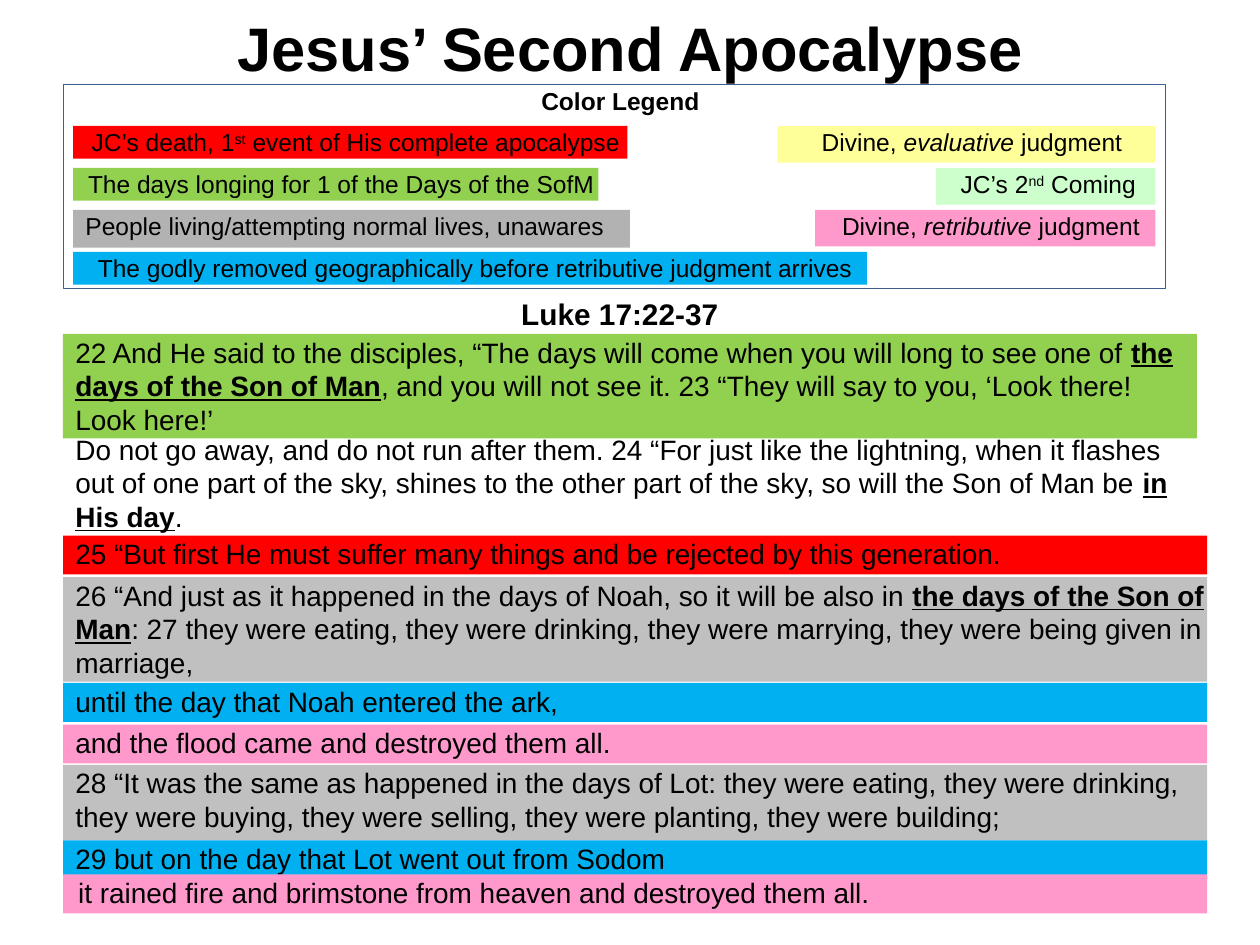
from dataclasses import dataclass

from pptx import Presentation
from pptx.dml.color import RGBColor
from pptx.enum.shapes import MSO_SHAPE
from pptx.enum.text import MSO_ANCHOR, PP_ALIGN
from pptx.shapes.shapetree import GroupShapes
from pptx.util import Inches, Pt

RECTANGLE = MSO_SHAPE.RECTANGLE
LEFT, CENTER = PP_ALIGN.LEFT, PP_ALIGN.CENTER
TOP, MIDDLE = MSO_ANCHOR.TOP, MSO_ANCHOR.MIDDLE

COLORS = {
    "text": "000000",
    "frame": "3A5F8C",
    "longing": "92D050",
    "death": "FF0000",
    "normal life": "C0C0C0",
    "normal life key": "B2B2B2",
    "removal": "00B0F0",
    "retribution": "FF99CC",
    "evaluation": "FFFF99",
    "coming": "CCFFCC",
}
FONT = "Arial"
KEY_PHRASE = {"bold": True, "underline": True}
BOLD = {"bold": True}
ITALIC = {"italic": True}
SUPERSCRIPT = "30000"


@dataclass
class Run:
    text: str
    font: dict | None = None
    raised: bool = False


@dataclass
class Band:
    runs: list[Run]
    left: float
    top: float
    width: float
    height: float
    size: float
    color: str | None = None
    align: PP_ALIGN = LEFT
    inset: float = 0.1
    wrap: bool = True
    anchor: MSO_ANCHOR = TOP


def rgb(name: str) -> RGBColor:
    return RGBColor.from_string(COLORS[name])


def draw_band(shapes: GroupShapes, band: Band) -> None:
    """Draw a text block, on a coloured bar if it has a color."""
    box = [Inches(v) for v in (band.left, band.top, band.width, band.height)]
    if band.color:
        block = shapes.add_shape(RECTANGLE, *box)
        block.shadow.inherit = False
        block.fill.solid()
        block.fill.fore_color.rgb = rgb(band.color)
        block.line.fill.background()
    else:
        block = shapes.add_textbox(*box)

    frame = block.text_frame
    edge = Inches(0.01)
    layout = {
        "margin_left": Inches(band.inset),
        "margin_top": edge,
        "margin_right": edge,
        "margin_bottom": edge,
        "word_wrap": band.wrap,
        "vertical_anchor": band.anchor,
    }
    for attribute, value in layout.items():
        setattr(frame, attribute, value)

    paragraph = frame.paragraphs[0]
    paragraph.alignment = band.align
    for part in band.runs:
        run = paragraph.add_run()
        run.text = part.text
        run.font.color.rgb = rgb("text")
        font = {"name": FONT, "size": Pt(band.size), **(part.font or {})}
        for attribute, value in font.items():
            setattr(run.font, attribute, value)
        if part.raised:
            run._r.get_or_add_rPr().set("baseline", SUPERSCRIPT)


def draw_passage(shapes: GroupShapes) -> None:
    left, size, width = 0.5, 16, 9.08
    verses = [
        ("longing", 2.65, 0.83, [
            Run("22 And He said to the disciples, “The days will come when you will long to see one of "),
            Run("the days of the Son of Man", KEY_PHRASE),
            Run(", and you will not see it. 23 “They will say to you, ‘Look there! Look here!’")]),
        (None, 3.42, 0.8, [
            Run("Do not go away, and do not run after them. 24 “For just like the lightning, when it "
                "flashes out of one part of the sky, shines to the other part of the sky, so will "
                "the Son of Man be "),
            Run("in His day", KEY_PHRASE),
            Run(".")]),
        ("death", 4.25, 0.31, [
            Run("25 “But first He must suffer many things and be rejected by this generation.")]),
        ("normal life", 4.58, 0.83, [
            Run("26 “And just as it happened in the days of Noah, so it will be also in "),
            Run("the days of the Son of Man", KEY_PHRASE),
            Run(": 27 they were eating, they were drinking, they were marrying, they were being "
                "given in marriage,")]),
        ("removal", 5.42, 0.31, [Run("until the day that Noah entered the ark,")]),
        ("retribution", 5.75, 0.31, [Run("and the flood came and destroyed them all.")]),
        ("normal life", 6.07, 0.6, [
            Run("28 “It was the same as happened in the days of Lot: they were eating, they were "
                "drinking, they were buying, they were selling, they were planting, they were "
                "building;")]),
        ("removal", 6.67, 0.31, [Run("29 but on the day that Lot went out from Sodom")]),
    ]
    for color, top, height, runs in verses:
        verse_width = 9 if color == "longing" else width
        draw_band(shapes, Band(runs, left, top, verse_width, height, size, color))
    draw_band(shapes, Band(
        [Run("it rained fire and brimstone from heaven and destroyed them all.")],
        left, 6.94, width, 0.31, size, "retribution", inset=0.12))
    draw_band(shapes, Band([Run("Luke 17:22-37", BOLD)], 4.03, 2.34, 1.69, 0.33, 17,
                           align=CENTER, wrap=False))


def draw_legend(shapes: GroupShapes) -> None:
    left, right, first_top, pitch, size = 0.58, 9.17, 1, 1 / 3, 14
    left_keys = [
        ("death", 4.4, 0.26, CENTER, [
            Run("JC’s death, 1"), Run("st", raised=True),
            Run(" event of His complete apocalypse")]),
        ("longing", 4.17, 0.26, CENTER, [Run("The days longing for 1 of the Days of the SofM")]),
        ("normal life key", 4.42, 0.3, LEFT, [
            Run("People living/attempting normal lives, unawares")]),
        ("removal", 6.3, 0.26, CENTER, [
            Run("The godly removed geographically before retributive judgment arrives")]),
    ]
    right_keys = [
        ("evaluation", 3, 0.1, [
            Run("Divine, "), Run("evaluative", ITALIC), Run(" judgment")]),
        ("coming", 1.74, 0.05, [
            Run("JC’s 2"), Run("nd", raised=True), Run(" Coming")]),
        ("retribution", 2.7, 0.1, [
            Run("Divine, "), Run("retributive", ITALIC), Run(" judgment")]),
    ]
    for row, (color, width, height, align, runs) in enumerate(left_keys):
        draw_band(shapes, Band(runs, left, first_top + row * pitch, width, height, size,
                               color, align))
    for row, (color, width, inset, runs) in enumerate(right_keys):
        draw_band(shapes, Band(runs, right - width, first_top + row * pitch, width, 0.29, size,
                               color, CENTER, inset))

    border = shapes.add_shape(RECTANGLE, Inches(0.5), Inches(0.67), Inches(8.75), Inches(1.62))
    border.shadow.inherit = False
    border.fill.background()
    border.line.color.rgb = rgb("frame")
    border.line.width = Pt(0.25)
    draw_band(shapes, Band([Run("Color Legend", BOLD)], 4.17, 0.67, 1.42, 0.29, size,
                           align=CENTER, wrap=False))


def main() -> None:
    deck = Presentation()
    deck.slide_width, deck.slide_height = Inches(10), Inches(7.5)
    slide = deck.slides.add_slide(deck.slide_layouts[6])
    draw_passage(slide.shapes.add_group_shape().shapes)
    draw_band(slide.shapes, Band([Run("Jesus’ Second Apocalypse", BOLD)], 0.5, 0, 9, 0.75, 35.1,
                                 align=CENTER, inset=0.01, anchor=MIDDLE))
    draw_legend(slide.shapes.add_group_shape().shapes)
    deck.save("out.pptx")


if __name__ == "__main__":
    main()
